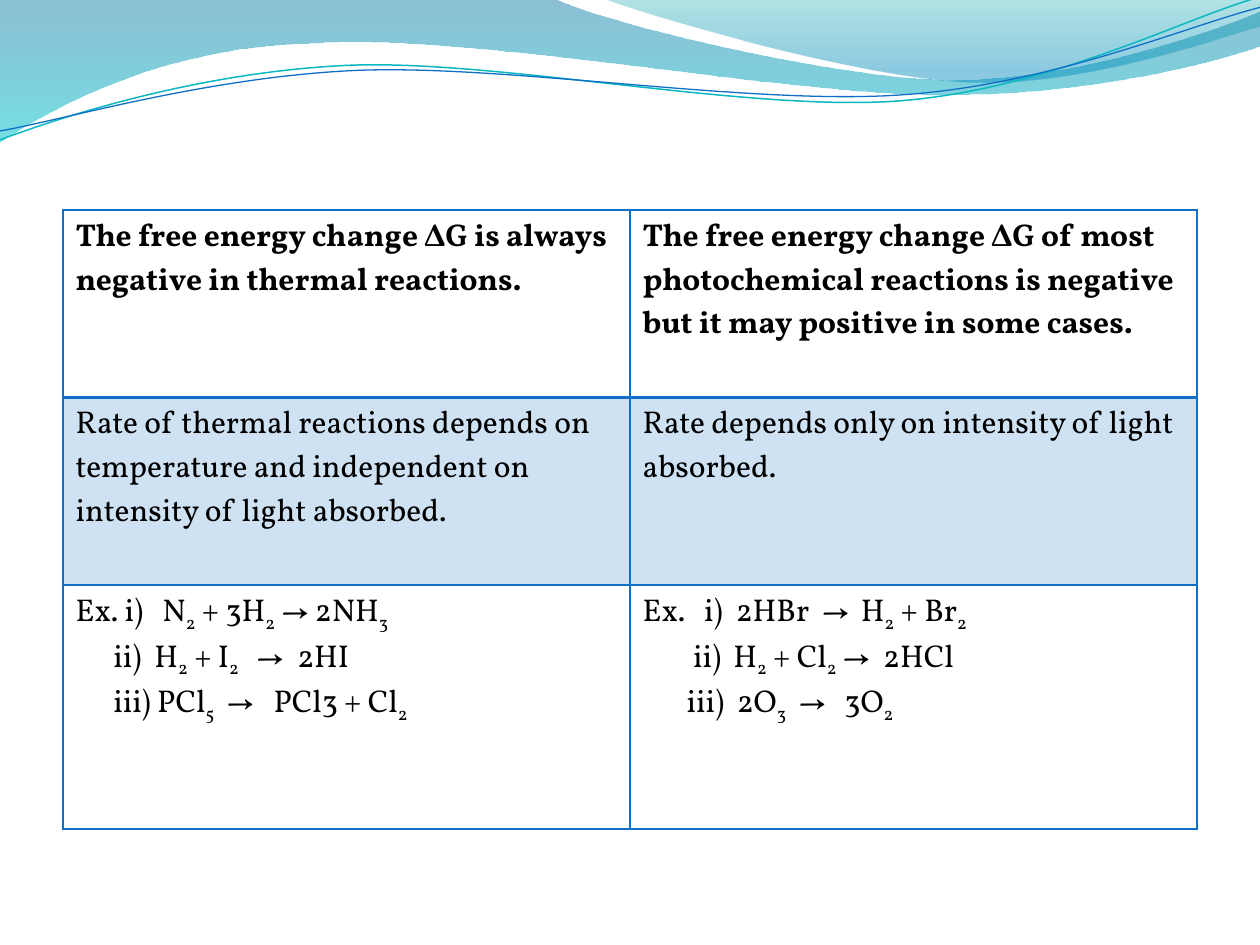
"""Build a slide comparing thermal and photochemical reactions in a table."""
from lxml import etree
from pptx import Presentation
from pptx.dml.color import RGBColor
from pptx.oxml.ns import qn
from pptx.util import Cm, Pt

FONT = "Vollkorn"
BLUE = "0F6FC6"


def rgb(color):
    return RGBColor.from_string(color)


def add_text(p, text, size=18, bold=False, color="000000", tabs=()):
    """Write text into a paragraph; an underscore lowers the next character."""
    if tabs:
        tab_list = etree.SubElement(p._p.get_or_add_pPr(), qn("a:tabLst"))
        for pos in tabs:
            etree.SubElement(tab_list, qn("a:tab"), pos=str(Cm(pos)), algn="l")
    first, *rest = text.split("_")
    pieces = [(first, False)]
    for part in rest:
        pieces += [(part[0], True), (part[1:], False)]
    for piece, lowered in pieces:
        if not piece:
            continue
        r = p.add_run()
        r.text = piece
        r.font.name = FONT
        r.font.size = Pt(size)
        r.font.bold = bold
        r.font.color.rgb = rgb(color)
        if lowered:
            r._r.get_or_add_rPr().set("baseline", "-25000")


prs = Presentation()
prs.slide_width, prs.slide_height = Cm(25.4), Cm(19.05)
s = prs.slides.add_slide(prs.slide_layouts[6])

waves = [
    {"start": (0, 0),
     "segments": [
         [(11.18, -0.03)],
         [(12.09, 0.43), (16.87, 1.6), (19.25, 1.6)],
         [(21.67, 1.6), (24.33, 0.66), (25.4, 0.23)],
         [(25.43, 0.91)],
         [(24.97, 1.12), (22.1, 1.93), (18.95, 1.91)],
         [(15.8, 1.91), (9.7, 0.71), (6.53, 0.86)],
         [(3.28, 0.91), (1.17, 2.11), (-0.03, 2.87)]],
     "stops": [(0, "0074A1", 45), (1, "00C6CF", 55)]},
    {"start": (12.17, -0.03),
     "segments": [
         [(12.93, 0.28), (17.32, 1.57), (19.53, 1.65)],
         [(21.74, 1.75), (24.41, 0.81), (25.4, 0.53)],
         [(25.4, 0)]],
     "stops": [(0, "00A1A9", 30), (0.8, "008BBF", 45)]},
    {"start": (-0.05, 2.22),
     "segments": [
         [(1.19, 1.82), (4.02, 1.04), (7.05, 1.05)],
         [(10.05, 1.07), (15.02, 2.37), (18.08, 2.29)],
         [(21.13, 2.2), (23.87, 0.91), (25.41, 0.55)]],
     "line": ("0AB8BF", 0.85)},
    {"start": (-0.04, 2.04),
     "segments": [
         [(1.16, 1.9), (4.18, 1.15), (7.2, 1.16)],
         [(10.25, 1.18), (15.13, 2.25), (18.18, 2.17)],
         [(21.21, 2.1), (23.93, 1.06), (25.45, 0.75)]],
     "line": (BLUE, 0.75)},
]

for wave in waves:
    x, y = wave["start"]
    builder = s.shapes.build_freeform(Cm(x), Cm(y))
    builder.add_line_segments(
        [(Cm(x), Cm(y)) for segment in wave["segments"] for x, y in segment],
        close="stops" in wave)
    sp = builder.convert_to_shape()
    sp.shadow.inherit = False
    steps = iter(list(sp._element.iter(qn("a:lnTo"))))
    for segment in wave["segments"]:
        group = [next(steps) for _ in segment]
        if len(group) == 3:
            curve = etree.Element(qn("a:cubicBezTo"))
            group[0].addprevious(curve)
            for step in group:
                curve.append(step[0])
                step.getparent().remove(step)
    if "line" in wave:
        color, width = wave["line"]
        sp.rotation = 357.3
        sp.fill.background()
        sp.line.color.rgb = rgb(color)
        sp.line.width = Pt(width)
        continue
    sp.line.fill.background()
    sp.fill.gradient()
    sp.fill.gradient_angle = 270
    for stop, (position, color, _) in zip(sp.fill.gradient_stops, wave["stops"]):
        stop.position = position
        stop.color.rgb = rgb(color)
    for clr, (_, _, alpha) in zip(sp._element.iter(qn("a:srgbClr")), wave["stops"]):
        etree.SubElement(clr, qn("a:alpha"), val=str(alpha * 1000))

rows = [
    [[("The free energy change ∆G is always negative in thermal reactions.", ())],
     [("The free energy change ∆G of most photochemical reactions is negative "
       "but it may positive in some cases.", ())]],
    [[("Rate of thermal reactions depends on temperature and independent on "
       "intensity of light absorbed.", ())],
     [("Rate depends only on intensity of light absorbed.", ())]],
    [[("Ex. i)\tN_2 + 3H_2 → 2NH_3", (1.75,)),
      ("\tii)\tH_2 + I_2\t→\t2HI", (0.76, 1.59, 3.65, 4.47)),
      ("\tiii) PCl_5\t→\tPCl3 + Cl_2", (0.76, 3.05, 3.99))],
     [("Ex.\ti)\t2HBr\t→\tH_2 + Br_2", (1.24, 1.88, 3.62, 4.4)),
      ("\tii)\tH_2 + Cl_2 →\t2HCl", (1.02, 1.83, 4.85)),
      ("\tiii)\t2O_3\t→\t3O_2", (0.89, 1.9, 3.15, 4.07))]],
]
row_heights = [3.78, 3.78, 4.92]

table = s.shapes.add_table(3, 2, Cm(1.27), Cm(4.23), Cm(22.86), Cm(sum(row_heights))).table
table.first_row = False
table.horz_banding = False
for row, height in zip(table.rows, row_heights):
    row.height = Cm(height)

for i, row in enumerate(rows):
    for j, lines in enumerate(row):
        cell = table.cell(i, j)
        tc_pr = cell._tc.get_or_add_tcPr()
        for side in "LRTB":
            heavy = (i, side) in ((0, "B"), (1, "T"))
            ln = etree.SubElement(tc_pr, qn(f"a:ln{side}"), w=str(Pt(2 if heavy else 1)))
            fill = etree.SubElement(ln, qn("a:solidFill"))
            etree.SubElement(fill, qn("a:srgbClr"), val=BLUE)
        if i == 1:
            cell.fill.solid()
            cell.fill.fore_color.rgb = rgb(BLUE)
            clr = tc_pr.find(qn("a:solidFill")).find(qn("a:srgbClr"))
            etree.SubElement(clr, qn("a:alpha"), val="20000")
        else:
            cell.fill.background()
        tf = cell.text_frame
        for k, (text, tabs) in enumerate(lines):
            p = tf.add_paragraph() if k else tf.paragraphs[0]
            add_text(p, text, bold=i == 0, tabs=tabs)

prs.save("out.pptx")
